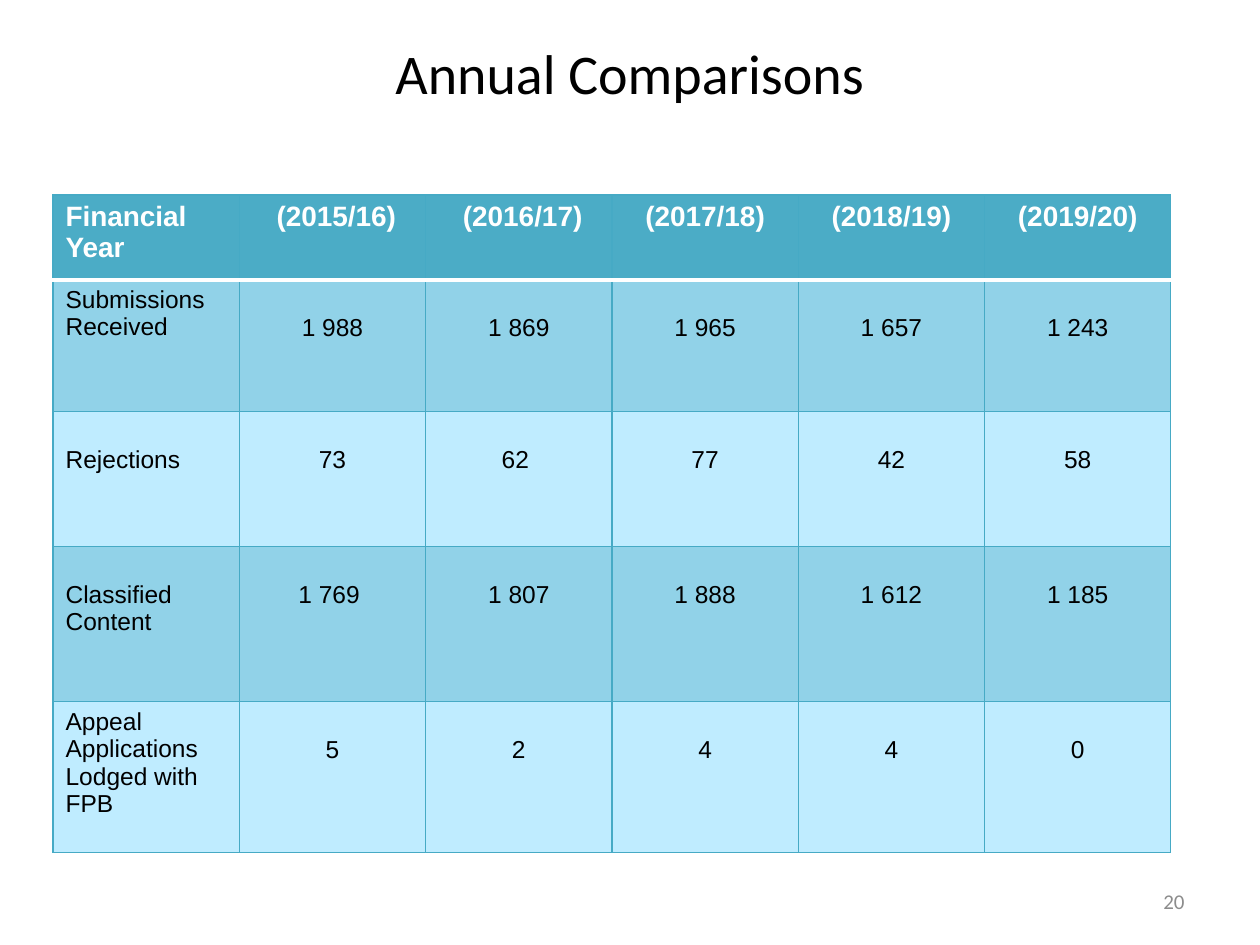
from dataclasses import dataclass

from lxml.etree import SubElement
from pptx import Presentation
from pptx.dml.color import RGBColor
from pptx.enum.text import MSO_ANCHOR, PP_ALIGN
from pptx.oxml.ns import qn
from pptx.util import Pt

EMU_PER_PX = 914400 / 126

BLACK = RGBColor(0x00, 0x00, 0x00)
WHITE = RGBColor(0xFF, 0xFF, 0xFF)
GRAY = RGBColor(0x8C, 0x8C, 0x8C)
TEAL = RGBColor(0x4B, 0xAC, 0xC6)
BORDER = RGBColor(0x46, 0xAA, 0xC5)
BAND_DARK = RGBColor(0x91, 0xD2, 0xE8)
BAND_LIGHT = RGBColor(0xBF, 0xEC, 0xFF)

TABLE_WIDTH = 1118
CELL_TOP = 6
LOWERED_TOP = 34


@dataclass(frozen=True)
class TableRow:
    label: str
    values: tuple[str, ...]
    height: int
    fill: RGBColor
    label_top: int = CELL_TOP
    value_top: int = LOWERED_TOP


ROWS = (
    TableRow("Financial Year",
             (" (2015/16)", " (2016/17)", "(2017/18)", "(2018/19)", "(2019/20)"),
             85, TEAL, value_top=CELL_TOP),
    TableRow("Submissions Received", ("1 988", "1 869", "1 965", "1 657", "1 243"),
             132, BAND_DARK),
    TableRow("Rejections", ("73", "62 ", "77", "42", "58"),
             135, BAND_LIGHT, label_top=LOWERED_TOP),
    TableRow("Classified Content", ("1 769 ", "1 807", "1 888", "1 612", "1 185"),
             155, BAND_DARK, label_top=LOWERED_TOP),
    TableRow("Appeal Applications Lodged with FPB", ("5", "2", "4", "4", "0"),
             151, BAND_LIGHT),
)


def px(length: float) -> int:
    return round(length * EMU_PER_PX)


def write_text(text_frame, text: str, *, size: int, color: RGBColor,
               font: str = "Arial", bold: bool = False,
               align: PP_ALIGN = PP_ALIGN.LEFT) -> None:
    text_frame.word_wrap = True
    paragraph = text_frame.paragraphs[0]
    paragraph.alignment = align
    run = paragraph.add_run()
    run.text = text
    run.font.name = font
    run.font.size = Pt(size)
    run.font.bold = bold
    run.font.color.rgb = color


def add_text_box(slide, left: int, top: int, width: int, height: int,
                 anchor: MSO_ANCHOR):
    shape = slide.shapes.add_textbox(px(left), px(top), px(width), px(height))
    shape.text_frame.vertical_anchor = anchor
    return shape.text_frame


def add_border(cell, side: str, color: RGBColor, width: float) -> None:
    properties = cell._tc.get_or_add_tcPr()
    line = SubElement(properties, qn(f"a:ln{side}"), w=str(Pt(width)))
    fill = SubElement(line, qn("a:solidFill"))
    SubElement(fill, qn("a:srgbClr"), val=str(color))


def draw_cell(cell, text: str, row: TableRow, row_index: int, is_label: bool) -> None:
    is_header = row_index == 0
    cell.margin_top = px(row.label_top if is_label else row.value_top)
    cell.vertical_anchor = MSO_ANCHOR.TOP
    for side in "LRTB":
        under_header = (row_index, side) in ((0, "B"), (1, "T"))
        add_border(cell, side, WHITE if under_header else BORDER,
                   2 if under_header else 0.75)
    cell.fill.solid()
    cell.fill.fore_color.rgb = row.fill
    write_text(cell.text_frame, text, size=16 if is_header else 14,
               color=WHITE if is_header else BLACK, bold=is_header,
               align=PP_ALIGN.LEFT if is_label else PP_ALIGN.CENTER)


def draw_table(slide, rows: tuple[TableRow, ...], left: int, top: int) -> None:
    column_count = 1 + len(rows[0].values)
    table = slide.shapes.add_table(
        len(rows), column_count, px(left), px(top), px(TABLE_WIDTH),
        px(sum(row.height for row in rows))).table
    table.horz_banding = False
    for column in table.columns:
        column.width = px(TABLE_WIDTH / column_count)
    for row_index, row in enumerate(rows):
        table.rows[row_index].height = px(row.height)
        for column_index, text in enumerate((row.label, *row.values)):
            draw_cell(table.cell(row_index, column_index), text, row,
                      row_index, column_index == 0)


def main() -> None:
    presentation = Presentation()
    presentation.slide_width = px(1260)
    presentation.slide_height = px(945)
    slide = presentation.slides.add_slide(presentation.slide_layouts[6])

    title = add_text_box(slide, 63, 38, 1134, 157, MSO_ANCHOR.TOP)
    title.margin_top = px(1)
    write_text(title, "Annual Comparisons", size=32, color=BLACK,
               font="Calibri", align=PP_ALIGN.CENTER)

    draw_table(slide, ROWS, left=53, top=195)

    page_number = add_text_box(slide, 903, 876, 294, 50, MSO_ANCHOR.MIDDLE)
    write_text(page_number, "20", size=12, color=GRAY,
               font="Calibri", align=PP_ALIGN.RIGHT)

    presentation.save("out.pptx")


if __name__ == "__main__":
    main()
